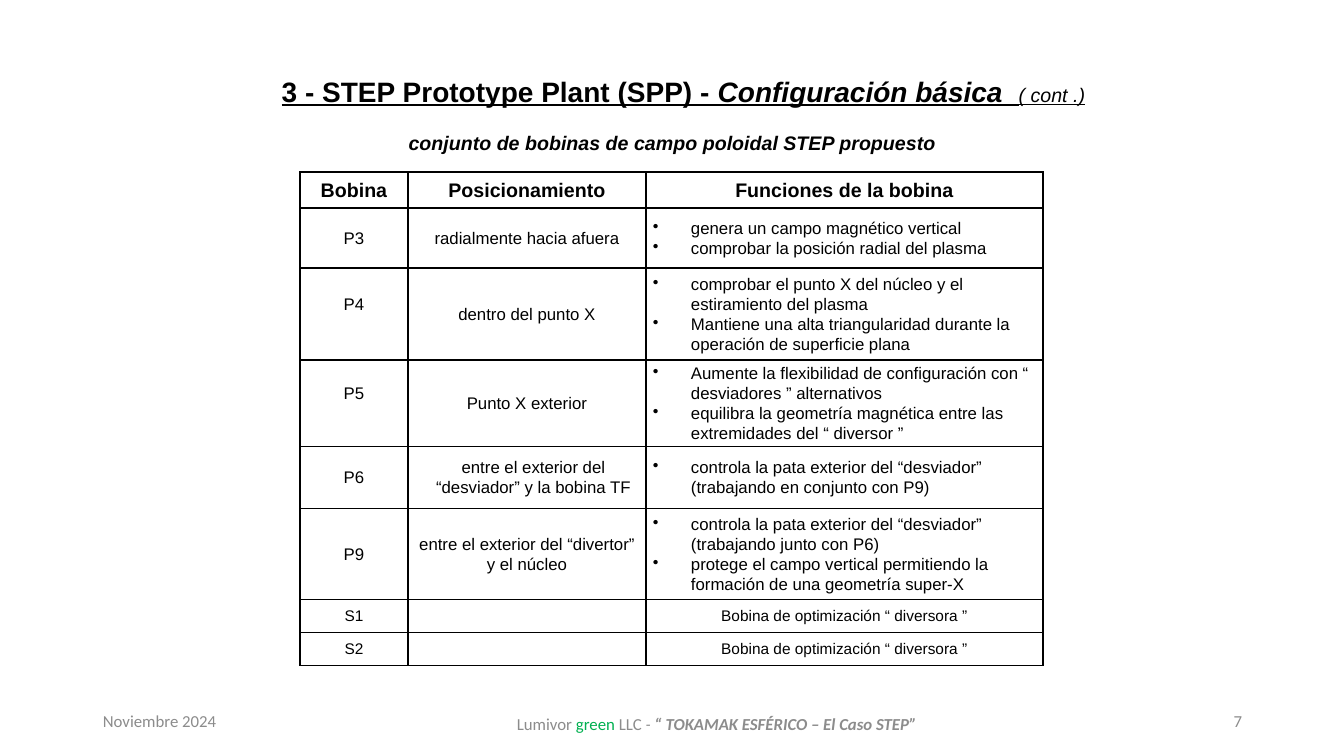
import pptx
import pptx.dml.color
import pptx.enum.text
import pptx.oxml
import pptx.oxml.ns
import pptx.util

PX = 914400 / 100.8
COLORS = {"ink": "000000", "muted": "8C8C8C", "green": "00B050"}
ALIGN = pptx.enum.text.PP_ALIGN
ANCHOR = pptx.enum.text.MSO_ANCHOR
NS = pptx.oxml.ns.nsdecls("a")


def px(n):
    return pptx.util.Emu(round(n * PX))


class Deck:
    def __init__(self, width, height):
        self.prs = pptx.Presentation()
        self.prs.slide_width, self.prs.slide_height = px(width), px(height)
        self.slide = self.prs.slides.add_slide(self.prs.slide_layouts[5])

    def style(self, font, size=None, color=None, name=None, **flags):
        if size:
            font.size = pptx.util.Pt(size)
        if color:
            font.color.rgb = pptx.dml.color.RGBColor.from_string(COLORS[color])
        if name:
            font.name = name
        for flag, value in flags.items():
            setattr(font, flag, value)

    def paragraph(self, p, runs, align, spacing=None, **font):
        p.alignment = align
        if spacing:
            p.line_spacing = spacing
        self.style(p.font, **font)
        for text, extra in runs:
            r = p.add_run()
            r.text = text
            self.style(r.font, **extra)

    def title(self, box, runs, **font):
        sp = self.slide.shapes.title
        sp.left, sp.top, sp.width, sp.height = map(px, box)
        tf = sp.text_frame
        tf.auto_size = pptx.enum.text.MSO_AUTO_SIZE.NONE
        tf.vertical_anchor = ANCHOR.TOP
        self.paragraph(tf.paragraphs[0], runs, ALIGN.CENTER, 1.06, **font)

    def text(self, box, runs, align, **font):
        tf = self.slide.shapes.add_textbox(*map(px, box)).text_frame
        tf.word_wrap = True
        tf.vertical_anchor = ANCHOR.MIDDLE
        self.paragraph(tf.paragraphs[0], runs, align, **font)

    def bullet(self, p):
        pPr = p._p.get_or_add_pPr()
        pPr.set("marL", str(px(38)))
        pPr.set("indent", str(-px(38)))
        bullet = pptx.oxml.parse_xml(f'<a:buChar {NS} char="•"/>')
        pPr.insert_element_before(bullet, "a:tabLst", "a:defRPr", "a:extLst")

    def borders(self, cell):
        tcPr = cell._tc.get_or_add_tcPr()
        for i, side in enumerate(("lnL", "lnR", "lnT", "lnB")):
            tcPr.insert(i, pptx.oxml.parse_xml(
                f'<a:{side} {NS} w="12700"><a:solidFill>'
                f'<a:srgbClr val="{COLORS["ink"]}"/></a:solidFill></a:{side}>'))

    def cell(self, cell, content, **font):
        cell.fill.background()
        self.borders(cell)
        cell.vertical_anchor = ANCHOR.MIDDLE
        cell.margin_left = cell.margin_right = px(7)
        cell.margin_top = cell.margin_bottom = 0
        bulleted = isinstance(content, list)
        tf = cell.text_frame
        for i, line in enumerate(content if bulleted else [content]):
            p = tf.add_paragraph() if i else tf.paragraphs[0]
            runs = [(line, {})] if line else []
            align = ALIGN.LEFT if bulleted else ALIGN.CENTER
            self.paragraph(p, runs, align, 1.07, color="ink", name="Arial", **font)
            if bulleted:
                self.bullet(p)

    def table(self, left, top, widths, heights, rows, sizes):
        frame = self.slide.shapes.add_table(
            len(rows), len(widths), px(left), px(top), px(sum(widths)), px(sum(heights)))
        table = frame.table
        table.first_row = table.horz_banding = False
        for column, width in zip(table.columns, widths):
            column.width = px(width)
        for i, (row, height, size) in enumerate(zip(rows, heights, sizes)):
            table.rows[i].height = px(height)
            for j, content in enumerate(row):
                self.cell(table.cell(i, j), content, size=size, bold=i == 0)
        return table


COILS = [
    ("Bobina", "Posicionamiento", "Funciones de la bobina"),
    ("P3", "radialmente hacia afuera",
     ["genera un campo magnético vertical",
      "comprobar la posición radial del plasma"]),
    ("P4", "dentro del punto X",
     ["comprobar el punto X del núcleo y el estiramiento del plasma",
      "Mantiene una alta triangularidad durante la operación de superficie plana"]),
    ("P5", "Punto X exterior",
     ["Aumente la flexibilidad de configuración con “ desviadores ” alternativos",
      "equilibra la geometría magnética entre las extremidades del “ diversor ”"]),
    ("P6", "entre el exterior del “desviador” y la bobina TF",
     ["controla la pata exterior del “desviador” (trabajando en conjunto con P9)"]),
    ("P9", "entre el exterior del “divertor” y el núcleo",
     ["controla la pata exterior del “desviador” (trabajando junto con P6)",
      "protege el campo vertical permitiendo la formación de una geometría super-X"]),
    ("S1", "", "Bobina de optimización “ diversora ”"),
    ("S2", "", "Bobina de optimización “ diversora ”"),
]


def main():
    deck = Deck(1344, 756)
    deck.title((197, 67, 973, 48), [
        ("3 - STEP Prototype Plant (SPP) - ", {}),
        ("Configuración básica", {"italic": True}),
        ("  ", {}),
        ("( cont .)", {"size": 14, "bold": False, "italic": True}),
    ], size=20, color="ink", name="Arial", bold=True, underline=True)
    deck.text((321, 126, 703, 34),
              [("conjunto de bobinas de campo poloidal STEP propuesto", {})],
              ALIGN.CENTER, size=14, color="ink", name="Arial", bold=True, italic=True)

    table = deck.table(300, 172, (108, 238, 397), (36, 60, 92, 83, 62, 91, 33, 33),
                       COILS, [14] + [12] * 5 + [11] * 2)
    for row in (2, 3):
        table.cell(row, 0).margin_bottom = px(20)
    table.cell(4, 1).margin_left = px(20)

    footer = {"size": 12, "name": "Calibri"}
    deck.text((93, 701, 142, 40), [("Noviembre 2024", {})], ALIGN.LEFT,
              color="muted", **footer)
    deck.text((381, 704, 672, 40), [
        ("Lumivor ", {"color": "muted"}),
        ("green ", {"color": "green"}),
        ("LLC ", {"color": "muted"}),
        ("- ", {"color": "muted", "italic": True}),
        ("“ TOKAMAK ESFÉRICO – El Caso STEP”",
         {"color": "muted", "bold": True, "italic": True}),
    ], ALIGN.CENTER, **footer)
    deck.text((950, 701, 302, 40), [("7", {})], ALIGN.RIGHT, color="muted", **footer)
    deck.prs.save("out.pptx")


if __name__ == "__main__":
    main()
